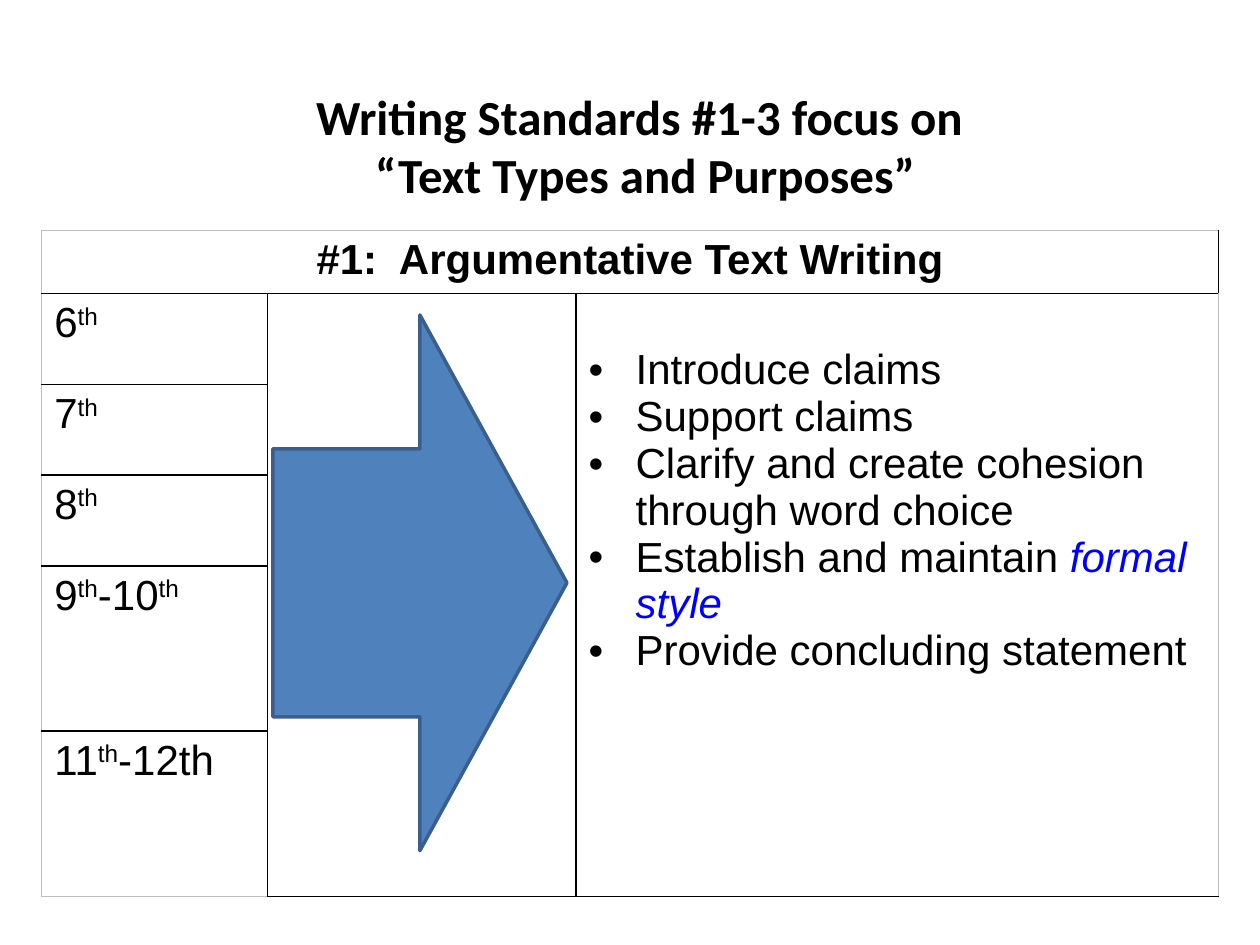
from lxml import etree
from pptx import Presentation
from pptx import util as u
from pptx.dml.color import RGBColor
from pptx.enum import shapes, text
from pptx.oxml.ns import qn

Cm, Pt = u.Cm, u.Pt
BLACK = RGBColor(0x00, 0x00, 0x00)
GREY = RGBColor(0xBF, 0xBF, 0xBF)
BLUE = RGBColor(0x00, 0x00, 0xFF)
FILL = RGBColor(0x4F, 0x81, 0xBD)
EDGE = RGBColor(0x3A, 0x5F, 0x8C)

COLS = [4.55, 6.22, 12.95]
ROWS = [1.27, 1.83, 1.83, 1.83, 3.33, 3.33]
# Each grade alternates plain and raised text
GRADES = [("6", "th"), ("7", "th"), ("8", "th"),
          ("9", "th", "-10", "th"), ("11", "th", "-12th")]
# Each goal has plain text and an optional stressed ending
GOALS = [("Introduce claims", ""),
         ("Support claims", ""),
         ("Clarify and create cohesion through word choice", ""),
         ("Establish and maintain ", "formal style"),
         ("Provide concluding statement", "")]


def set_font(par, name, size, bold=False):
    font = par.font
    font.name, font.size, font.bold = name, Pt(size), bold
    font.color.rgb = BLACK


def add_title(slide):
    title = slide.shapes.title
    title.left, title.top = Cm(2.74), Cm(1.6)
    title.width, title.height = Cm(20.52), Cm(2.64)
    frame = title.text_frame
    frame.auto_size = text.MSO_AUTO_SIZE.NONE
    frame.text = "Writing Standards #1-3 focus on \n“Text Types and Purposes”"
    for par in frame.paragraphs:
        par.alignment = text.PP_ALIGN.CENTER
        set_font(par, "Calibri", 28, True)


def add_bullet(par):
    props = par._p.get_or_add_pPr()
    props.set("marL", str(Cm(0.95)))
    props.set("indent", str(-Cm(0.95)))
    etree.SubElement(props, qn("a:buFont")).set("typeface", "Arial")
    etree.SubElement(props, qn("a:buChar")).set("char", "•")


def set_edges(cell, colors):
    """Draw the left, right, top and bottom borders, in that order."""
    props = cell._tc.get_or_add_tcPr()
    for i, (side, color) in enumerate(zip("LRTB", colors)):
        line = etree.Element(qn(f"a:ln{side}"), w=str(Pt(1)))
        fill = etree.SubElement(line, qn("a:solidFill"))
        etree.SubElement(fill, qn("a:srgbClr")).set("val", str(color))
        props.insert(i, line)


def fill_grade(cell, parts):
    par = cell.text_frame.paragraphs[0]
    set_font(par, "Arial", 24)
    for i, part in enumerate(parts):
        run = par.add_run()
        run.text = part
        if i == 1 or i == 3:
            run._r.get_or_add_rPr().set("baseline", "30000")


def fill_goals(cell):
    cell.margin_top = Cm(1.07)
    frame = cell.text_frame
    for i, (plain, stress) in enumerate(GOALS):
        par = frame.add_paragraph() if i else frame.paragraphs[0]
        add_bullet(par)
        set_font(par, "Arial", 24)
        par.add_run().text = plain
        if stress:
            run = par.add_run()
            run.text = stress
            run.font.italic = True
            run.font.color.rgb = BLUE


def add_grid(slide):
    rows, cols = len(ROWS), len(COLS)
    table = slide.shapes.add_table(rows, cols, Cm(0.84), Cm(4.65),
                                   Cm(sum(COLS)), Cm(sum(ROWS))).table
    table.first_row = table.horz_banding = False
    for col, width in zip(table.columns, COLS):
        col.width = Cm(width)
    for row, height in zip(table.rows, ROWS):
        row.height = Cm(height)

    # Grey outer frame, black inner lines
    for r in range(rows):
        for c in range(cols):
            cell = table.cell(r, c)
            cell.fill.background()
            outer = (c == 0, c == cols - 1, r == 0, r == rows - 1)
            set_edges(cell, [GREY if out else BLACK for out in outer])

    # Heading across the top, arrow and goals beside all grades
    head = table.cell(0, 0)
    head.merge(table.cell(0, cols - 1))
    for c in (1, 2):
        table.cell(1, c).merge(table.cell(rows - 1, c))
    head.text = "#1:  Argumentative Text Writing"
    par = head.text_frame.paragraphs[0]
    par.alignment = text.PP_ALIGN.CENTER
    set_font(par, "Arial", 24, True)

    for r, parts in enumerate(GRADES, 1):
        fill_grade(table.cell(r, 0), parts)
    fill_goals(table.cell(1, 2))


def add_arrow(slide):
    arrow = slide.shapes.add_shape(shapes.MSO_SHAPE.RIGHT_ARROW,
                                   Cm(5.5), Cm(6.35), Cm(5.93), Cm(10.8))
    arrow.shadow.inherit = False
    arrow.fill.solid()
    arrow.fill.fore_color.rgb = FILL
    arrow.line.color.rgb = EDGE
    arrow.line.width = Pt(2)


def main():
    deck = Presentation()
    deck.slide_width, deck.slide_height = Cm(25.4), Cm(19.05)
    slide = deck.slides.add_slide(deck.slide_layouts[5])
    add_title(slide)
    add_grid(slide)
    add_arrow(slide)
    deck.save("out.pptx")


if __name__ == "__main__":
    main()
